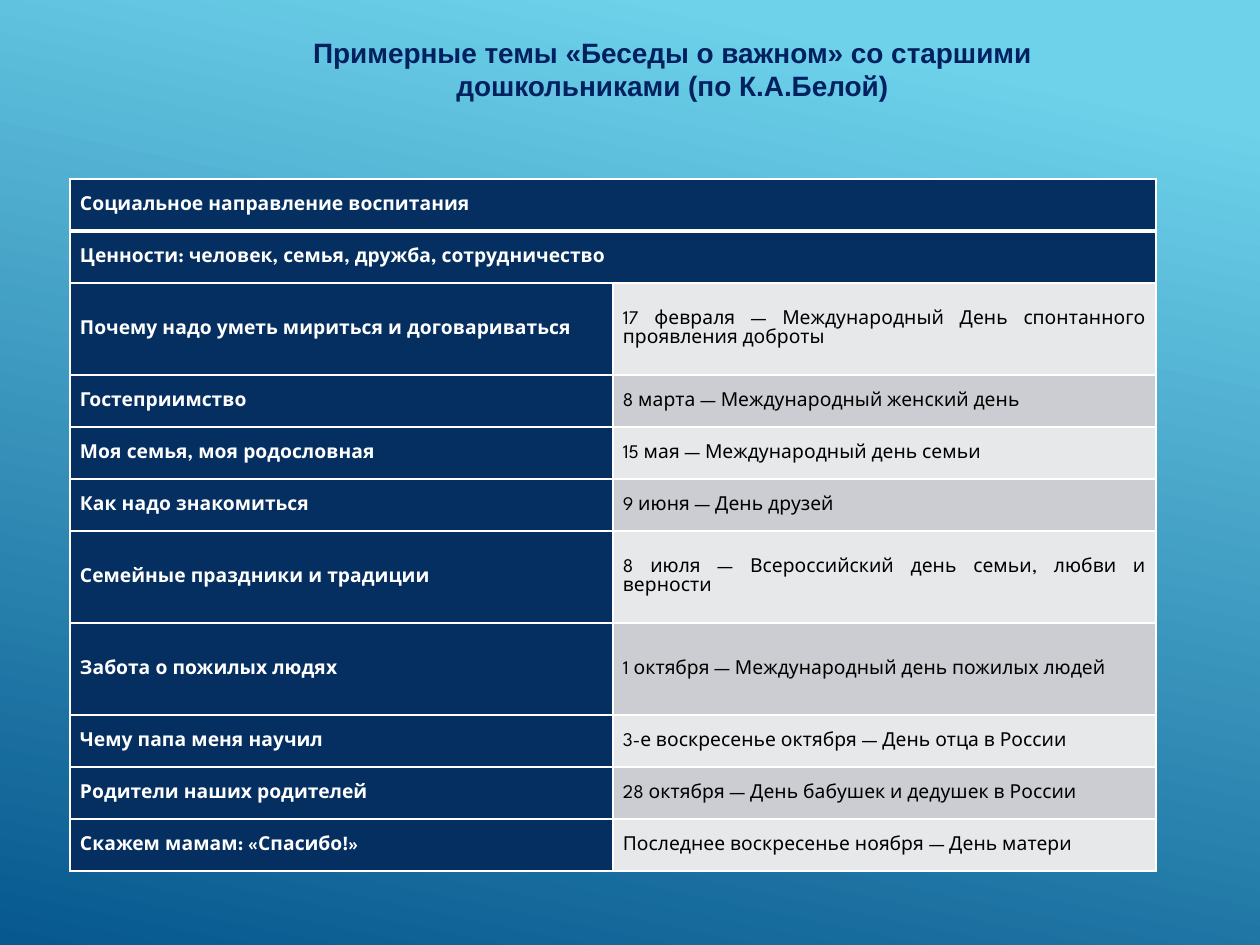
"""Build a slide listing talk topics for older preschoolers and their matching dates."""
import lxml.etree
import pptx
import pptx.dml.color
import pptx.enum.text
import pptx.oxml.ns
import pptx.util

TITLE = "Примерные темы «Беседы о важном» со старшими дошкольниками (по К.А.Белой)"
HEADINGS = [
    "Социальное направление воспитания",
    "Ценности: человек, семья, дружба, сотрудничество",
]
TOPICS = [
    ("Почему надо уметь мириться и договариваться",
     "17 февраля — Международный День спонтанного проявления доброты"),
    ("Гостеприимство", "8 марта — Международный женский день"),
    ("Моя семья, моя родословная", "15 мая — Международный день семьи"),
    ("Как надо знакомиться", "9 июня — День друзей"),
    ("Семейные праздники и традиции", "8 июля — Всероссийский день семьи, любви и верности"),
    ("Забота о пожилых людях", "1 октября — Международный день пожилых людей"),
    ("Чему папа меня научил", "3-е воскресенье октября — День отца в России"),
    ("Родители наших родителей", "28 октября — День бабушек и дедушек в России"),
    ("Скажем мамам: «Спасибо!»", "Последнее воскресенье ноября — День матери"),
]
TALL_ROWS = {2, 6, 7}
ROW_HEIGHT, TALL_HEIGHT, COLUMN_WIDTH = 52, 92, 543
NAVY, WHITE, BLACK = "052F61", "FFFFFF", "000000"
BANDS = ["E7E8EA", "CCCDD2"]
SCALE = 914400 // 126


def px(length):
    """Turn pixels into EMU."""
    return pptx.util.Emu(length * SCALE)


def color(value):
    """Turn a hex string into a colour."""
    return pptx.dml.color.RGBColor.from_string(value)


def style_font(para, name, size, value, bold):
    """Format every run of a paragraph."""
    for span in para.runs:
        span.font.name = name
        span.font.size = pptx.util.Pt(size)
        span.font.bold = bold
        span.font.color.rgb = color(value)


def set_margins(target, left, top, right, bottom):
    """Set the inner margins of a cell or text frame."""
    target.margin_left, target.margin_top = px(left), px(top)
    target.margin_right, target.margin_bottom = px(right), px(bottom)


def add_borders(cell, widths):
    """Draw white borders, with widths in points by side."""
    qn = pptx.oxml.ns.qn
    properties = cell._tc.get_or_add_tcPr()
    for side, width in widths.items():
        line = lxml.etree.SubElement(properties, qn(f"a:ln{side}"), w=str(pptx.util.Pt(width)))
        fill = lxml.etree.SubElement(line, qn("a:solidFill"))
        lxml.etree.SubElement(fill, qn("a:srgbClr"), val=WHITE)


def paint_background(page):
    """Fill the page with a blue gradient."""
    fill = page.background.fill
    fill.gradient()
    fill.gradient_angle = 360 - 102
    for stop, (value, position) in zip(fill.gradient_stops, [("6ED2EB", 0.1), ("06588E", 1)]):
        stop.color.rgb = color(value)
        stop.position = position


def add_title(page):
    """Add the centred title."""
    box = page.shapes.add_textbox(px(231), px(31), px(883), px(72))
    frame = box.text_frame
    frame.word_wrap = True
    set_margins(frame, 0, 4, 0, 0)
    frame.text = TITLE
    para = frame.paragraphs[0]
    para.alignment = pptx.enum.text.PP_ALIGN.CENTER
    para.space_before = pptx.util.Pt(2)
    style_font(para, "Arial", 16, "002060", True)


def fill_cell(cell, text, background, value, bold, widths):
    """Write and format one table cell."""
    cell.text = text
    cell.vertical_anchor = pptx.enum.text.MSO_ANCHOR.MIDDLE
    set_margins(cell, 10, 5, 10, 5)
    add_borders(cell, widths)
    cell.fill.solid()
    cell.fill.fore_color.rgb = color(background)
    para = cell.text_frame.paragraphs[0]
    para.alignment = pptx.enum.text.PP_ALIGN.JUSTIFY
    para.line_spacing = 1.07
    para.space_after = pptx.util.Pt(8)
    style_font(para, "League Spartan", 11, value, bold)


def add_topics(page):
    """Add the table of headings, topics and dates."""
    rows = [(heading, "") for heading in HEADINGS] + TOPICS
    heights = [TALL_HEIGHT if index in TALL_ROWS else ROW_HEIGHT for index in range(len(rows))]
    table = page.shapes.add_table(
        len(rows), 2, px(70), px(179), px(2 * COLUMN_WIDTH), px(sum(heights))).table
    table.first_row = table.horz_banding = False
    for column in table.columns:
        column.width = px(COLUMN_WIDTH)
    for index, (topic, date) in enumerate(rows):
        table.rows[index].height = px(heights[index])
        widths = {"L": 1, "R": 1, "T": 3 if index == 1 else 1, "B": 3 if index == 0 else 1}
        is_heading = index < len(HEADINGS)
        band = NAVY if is_heading else BANDS[index % 2]
        fill_cell(table.cell(index, 0), topic, NAVY, WHITE, True, widths)
        fill_cell(table.cell(index, 1), date, band, BLACK, False, widths)
        if is_heading:
            table.cell(index, 0).merge(table.cell(index, 1))


def main():
    """Create and save the deck."""
    deck = pptx.Presentation()
    deck.slide_width, deck.slide_height = px(1260), px(945)
    page = deck.slides.add_slide(deck.slide_layouts[6])
    paint_background(page)
    add_title(page)
    add_topics(page)
    deck.save("out.pptx")


if __name__ == "__main__":
    main()
